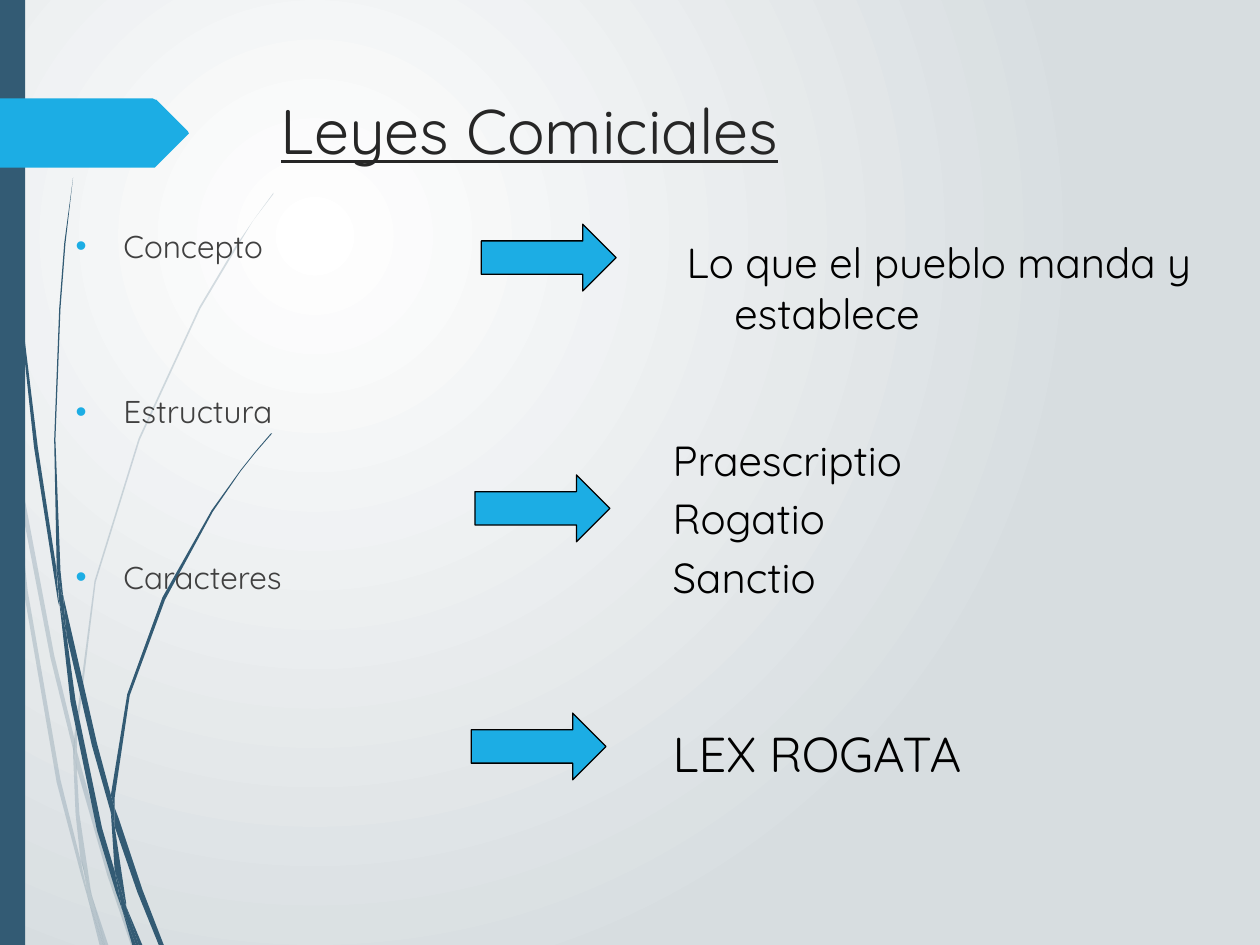
from lxml import etree
from pptx import Presentation
from pptx.dml.color import RGBColor as RGB
from pptx.enum.shapes import MSO_SHAPE as SHAPE
from pptx.enum.text import MSO_ANCHOR as ANCHOR, MSO_AUTO_SIZE as AUTO_SIZE, PP_ALIGN as ALIGN
from pptx.oxml import parse_xml
from pptx.oxml.ns import nsdecls, qn
from pptx.util import Inches, Pt

THEME = {
    "font": "Quicksand",
    "navy": RGB.from_string("335B74"),
    "accent": RGB.from_string("1CADE4"),
    "black": RGB.from_string("000000"),
    "title": RGB.from_string("262626"),
    "body": RGB.from_string("404040"),
    "background": (RGB.from_string("FFFFFF"), RGB.from_string("D7DDE0")),
    "title_size": 36, "body_size": 18, "text_size": 24, "large_size": 28,
    "pale_alpha": 20,
}
SLIDE_SIZE = (10, 7.5)
HANGING = 0.38

TITLE = ("Leyes Comiciales", (2.13, 0.68, 7.21, 1.4))
TOPICS = (["Concepto", "Estructura", "Caracteres"], (0.5, 1.75, 6, 4.95))
ANSWERS = [
    {"arrow": (3.82, 1.78), "text": (5.35, 1.83), "size": "text_size",
     "lines": ["Lo que el pueblo manda y establece"]},
    {"arrow": (3.77, 3.77), "text": (5.24, 3.4), "size": "text_size",
     "lines": ["Praescriptio", "Rogatio", "Sanctio"]},
    {"arrow": (3.74, 5.66), "text": (5.24, 5.69), "size": "large_size",
     "lines": ["LEX ROGATA"]},
]
ARROW_SIZE = (1.07, 0.53)
ANSWER_SIZE = (4.65, 1.21)

PALE_BLADES = [
    [(0.4, 5.22), (0.59, 5.99), (0.59, 5.86), (0.43, 5.2), (0.1, 3.45), (0.12, 3.76)],
    [(0.64, 6.07), (0.61, 5.96), (0.61, 6.1), (0.85, 6.94), (1.04, 7.5), (1.08, 7.5), (0.88, 6.92)],
    [(0.83, 7.5), (0.86, 7.5), (0.73, 7.11)],
    [(0.64, 6.83), (0.48, 6.19), (0.22, 4.69), (0.12, 3.76), (0.08, 3.5), (0.19, 4.7),
     (0.45, 6.21), (0.64, 6.93), (0.7, 7.14), (0.69, 7.07)],
    [(0.58, 5.99), (0.6, 6.46), (0.64, 6.83), (0.67, 6.92), (0.73, 7.11), (0.72, 7.06),
     (0.63, 6.46), (0.61, 6.1), (0.61, 6.08)],
    [(0.61, 5.84), (0.76, 4.62), (1.11, 3.49), (1.59, 2.45), (1.87, 1.98), (2.01, 1.75),
     (2.17, 1.54), (2.17, 1.53), (2.01, 1.75), (1.86, 1.97), (1.58, 2.44), (1.1, 3.48),
     (0.75, 4.61), (0.59, 5.84), (0.59, 5.86), (0.61, 5.96)],
    [(0.7, 7.14), (0.79, 7.5), (0.82, 7.5)],
    [(0.61, 6.08), (0.61, 6.1), (0.61, 5.96), (0.59, 5.86), (0.58, 5.99)],
    [(0.67, 6.92), (0.65, 6.83), (0.69, 7.07), (0.7, 7.14), (0.82, 7.5), (0.83, 7.5), (0.73, 7.11)],
]
DARK_BLADES = [
    [(0.05, 1.1), (0.14, 2.33), (0.27, 3.55), (0.46, 4.77), (0.47, 4.81), (0.45, 4.57),
     (0.45, 4.53), (0.3, 3.55), (0.15, 2.32), (0.06, 1.09), (0.04, 0.48), (0.03, 0),
     (0.02, 0), (0.03, 0.48)],
    [(0.73, 5.92), (0.88, 6.45), (0.88, 6.31), (0.77, 5.9), (0.5, 4.72), (0.53, 5.05)],
    [(0.94, 6.49), (0.91, 6.41), (0.91, 6.56), (1.09, 7.08), (1.26, 7.5), (1.3, 7.5), (1.13, 7.06)],
    [(0.91, 6.91), (0.81, 6.57), (0.6, 5.56), (0.53, 5.05), (0.47, 4.77), (0.56, 5.57),
     (0.77, 6.59), (0.92, 7.08), (0.97, 7.22), (0.96, 7.17)],
    [(0.5, 4.72), (0.48, 4.53), (0.44, 3.49), (0.48, 2.45), (0.52, 1.93), (0.58, 1.41),
     (0.51, 1.93), (0.47, 2.45), (0.43, 3.49), (0.45, 4.49), (0.49, 4.72)],
    [(1.1, 7.5), (1.13, 7.5), (1, 7.19)],
    [(0.47, 4.77), (0.53, 5.05), (0.5, 4.72), (0.49, 4.72), (0.45, 4.49), (0.45, 4.53)],
    [(0.91, 6.33), (1.03, 5.52), (1.31, 4.76), (1.69, 4.06), (1.91, 3.74), (2.03, 3.59),
     (2.16, 3.44), (2.15, 3.44), (2.03, 3.58), (1.91, 3.73), (1.68, 4.05), (1.29, 4.74),
     (1.01, 5.51), (0.88, 6.31), (0.91, 6.41)],
    [(0.97, 7.22), (1.05, 7.5), (1.08, 7.5)],
    [(0.88, 6.45), (0.91, 6.91), (0.96, 7.06), (1, 7.19), (1, 7.16), (0.91, 6.56), (0.9, 6.51)],
    [(0.88, 6.45), (0.9, 6.51), (0.91, 6.56), (0.91, 6.41), (0.88, 6.31), (0.88, 6.33)],
    [(0.96, 7.06), (0.91, 6.91), (0.96, 7.17), (0.97, 7.22), (1.08, 7.5), (1.1, 7.5), (1, 7.19)],
]
TAG = [(1.49, 1.07), (1.24, 1.32), (1.23, 1.33), (1.21, 1.33), (0, 1.33), (0, 0.78),
       (1.21, 0.78), (1.23, 0.79), (1.24, 0.79), (1.49, 1.04), (1.5, 1.06)]


def inches(values):
    return [Inches(value) for value in values]


def paint(shape, color, line=None):
    shape.shadow.inherit = False
    shape.fill.solid()
    shape.fill.fore_color.rgb = color
    if line is None:
        shape.line.fill.background()
    else:
        shape.line.color.rgb = line
        shape.line.width = Pt(0.75)


def draw_outline(shapes, points, color, alpha=None):
    start, *rest = [inches(point) for point in points]
    builder = shapes.build_freeform(*start)
    builder.add_line_segments(rest, close=True)
    shape = builder.convert_to_shape()
    paint(shape, color)
    if alpha:
        color_element = shape._element.spPr.find(qn("a:solidFill"))[0]
        etree.SubElement(color_element, qn("a:alpha"), val=str(alpha * 1000))


def write(shape, lines, size, color, gap=0, hanging=0, underline=None):
    frame = shape.text_frame
    settings = {"word_wrap": True, "auto_size": AUTO_SIZE.NONE, "vertical_anchor": ANCHOR.TOP}
    for name, value in settings.items():
        setattr(frame, name, value)
    for index, line in enumerate(lines):
        paragraph = frame.paragraphs[0] if index == 0 else frame.add_paragraph()
        paragraph.alignment = ALIGN.LEFT
        paragraph.space_before = Pt(gap if index else 0)
        properties = paragraph._p.get_or_add_pPr()
        properties.set("marL", str(Inches(hanging)))
        properties.set("indent", str(-Inches(hanging)))
        run = paragraph.add_run()
        run.text = line
        font = {"name": THEME["font"], "size": Pt(size), "underline": underline}
        for name, value in font.items():
            setattr(run.font, name, value)
        run.font.color.rgb = color


def place(shape, box):
    for name, value in zip(("left", "top", "width", "height"), inches(box)):
        setattr(shape, name, value)


def add_background(slide):
    fill = slide.background.fill
    fill.gradient()
    for stop, color in zip(fill.gradient_stops, THEME["background"]):
        stop.color.rgb = color
    gradient = slide._element.find(".//" + qn("a:gradFill"))
    gradient.remove(gradient.find(qn("a:lin")))
    gradient.append(parse_xml(
        f'<a:path {nsdecls("a")} path="circle">'
        '<a:fillToRect l="50000" t="50000" r="100000" b="100000"/></a:path>'))


def add_decoration(shapes):
    for blades, alpha in ((PALE_BLADES, THEME["pale_alpha"]), (DARK_BLADES, None)):
        group = shapes.add_group_shape()
        for blade in blades:
            draw_outline(group.shapes, blade, THEME["navy"], alpha)
    bar = shapes.add_shape(SHAPE.RECTANGLE, *inches((0, 0, 0.2, SLIDE_SIZE[1])))
    paint(bar, THEME["navy"])
    draw_outline(shapes, TAG, THEME["accent"])


def add_placeholders(slide):
    title, body = slide.shapes.title, slide.placeholders[1]
    for shape, box in ((title, TITLE[1]), (body, TOPICS[1])):
        place(shape, box)
        slide.shapes._spTree.append(shape._element)
    write(title, [TITLE[0]], THEME["title_size"], THEME["title"], underline=True)
    write(body, TOPICS[0], THEME["body_size"], THEME["body"], gap=73, hanging=HANGING)
    for paragraph in body.text_frame.paragraphs:
        properties = paragraph._p.get_or_add_pPr()
        bullet_color = etree.SubElement(properties, qn("a:buClr"))
        etree.SubElement(bullet_color, qn("a:srgbClr"), val=str(THEME["accent"]))
        etree.SubElement(properties, qn("a:buChar"), char="•")


def add_answers(shapes):
    for answer in ANSWERS:
        arrow = shapes.add_shape(SHAPE.RIGHT_ARROW, *inches(answer["arrow"] + ARROW_SIZE))
        paint(arrow, THEME["accent"], THEME["black"])
        box = shapes.add_textbox(*inches(answer["text"] + ANSWER_SIZE))
        write(box, answer["lines"], THEME[answer["size"]], THEME["black"], gap=4.5, hanging=HANGING)


def main():
    presentation = Presentation()
    presentation.slide_width, presentation.slide_height = inches(SLIDE_SIZE)
    slide = presentation.slides.add_slide(presentation.slide_layouts[1])
    add_background(slide)
    add_decoration(slide.shapes)
    add_placeholders(slide)
    add_answers(slide.shapes)
    presentation.save("out.pptx")


if __name__ == "__main__":
    main()
